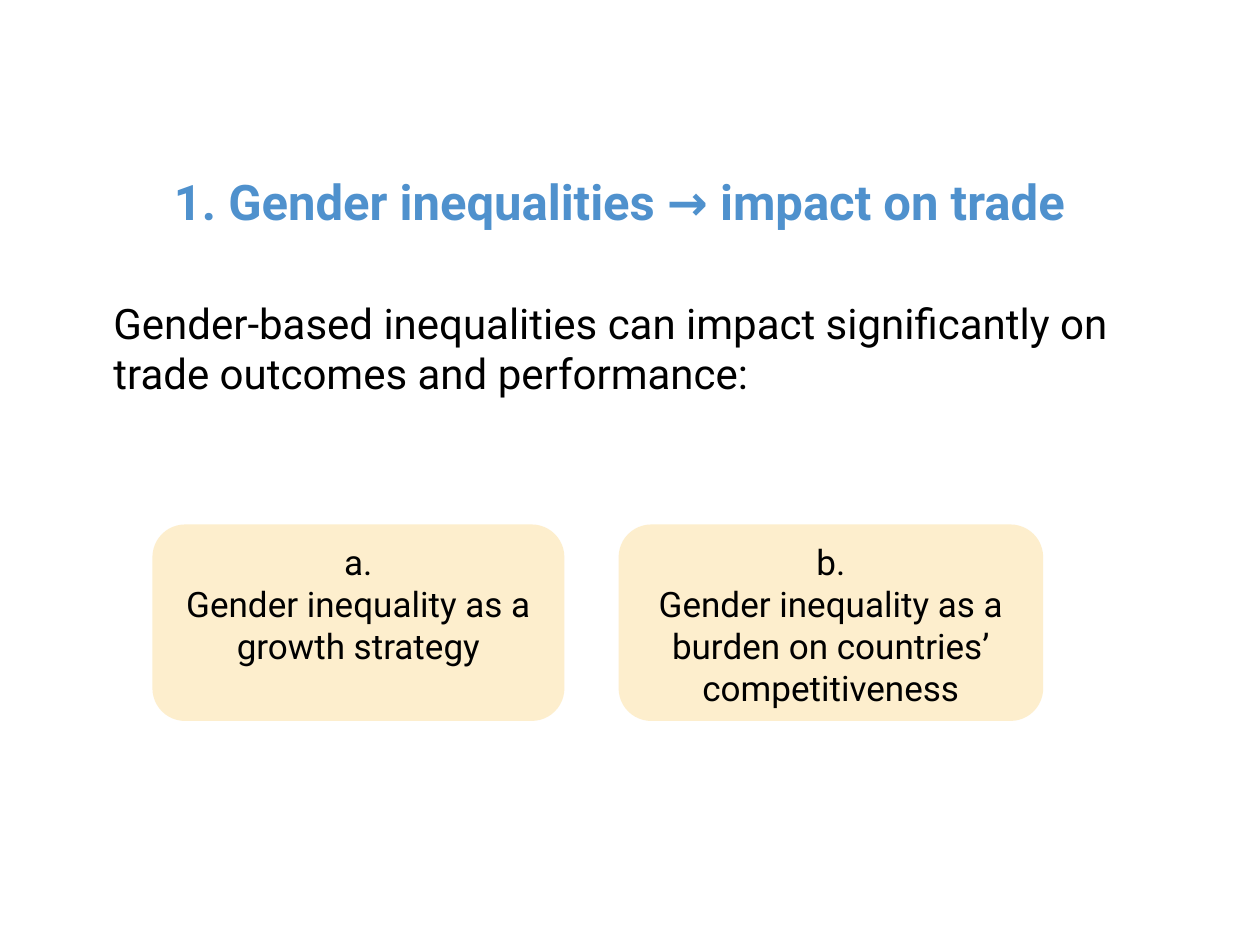
from dataclasses import dataclass

from lxml import etree
from pptx import Presentation
from pptx.dml.color import RGBColor
from pptx.enum.shapes import MSO_SHAPE
from pptx.enum.text import MSO_ANCHOR, MSO_AUTO_SIZE, PP_ALIGN
from pptx.oxml.ns import qn
from pptx.util import Inches, Pt

ROUNDED = MSO_SHAPE.ROUNDED_RECTANGLE
TOP = MSO_ANCHOR.TOP
NO_AUTOFIT = MSO_AUTO_SIZE.NONE
LEFT, CENTER = PP_ALIGN.LEFT, PP_ALIGN.CENTER

FONT = "Roboto"
COLORS = {"title": "4F91CD", "text": "000000", "card": "FCE2A7"}
CARD_OPACITY = 56
PAGE_WIDTH, PAGE_HEIGHT = Inches(10), Inches(7.5)


@dataclass
class Area:
    """A rectangle in shares of the slide's width and height."""
    left: float
    top: float
    width: float
    height: float

    def lengths(self) -> tuple[int, int, int, int]:
        return (int(self.left * PAGE_WIDTH), int(self.top * PAGE_HEIGHT),
                int(self.width * PAGE_WIDTH), int(self.height * PAGE_HEIGHT))


@dataclass
class Card:
    lines: list[str]
    left: float
    width: float


TITLE_AREA = Area(0.03, 0.175, 0.923, 0.167)
BODY_AREA = Area(0.08, 0.308, 0.823, 0.122)
CARD_TOP, CARD_HEIGHT = 0.555, 0.208
CARDS = [
    Card(["a.", "Gender inequality as a growth strategy"], 0.121, 0.327),
    Card(["b.", "Gender inequality as a burden on countries’ competitiveness"], 0.491, 0.337),
]


def write_text(box, lines: list[str], *, size: float, color: str = "text",
               bold: bool = False, align=LEFT) -> None:
    frame = box.text_frame
    frame.text = "\n".join(lines)
    frame.word_wrap = True
    frame.auto_size = NO_AUTOFIT
    frame.vertical_anchor = TOP
    for para in frame.paragraphs:
        properties = para._p.get_or_add_pPr()
        properties.set("marL", "0")
        properties.set("indent", "0")
        etree.SubElement(properties, qn("a:buNone"))
        para.alignment = align
        para.space_before = Pt(0)
        for span in para.runs:
            span.font.name = FONT
            span.font.size = Pt(size)
            span.font.bold = bold
            span.font.color.rgb = RGBColor.from_string(COLORS[color])


def place(box, area: Area) -> None:
    box.left, box.top, box.width, box.height = area.lengths()


def draw_card(page, card: Card) -> None:
    area = Area(card.left, CARD_TOP, card.width, CARD_HEIGHT)
    box = page.shapes.add_shape(ROUNDED, *area.lengths())
    box.shadow.inherit = False
    box.line.fill.background()
    box.fill.solid()
    box.fill.fore_color.rgb = RGBColor.from_string(COLORS["card"])
    tint = box.fill._xPr.find(qn("a:solidFill"))[0]
    etree.SubElement(tint, qn("a:alpha"), val=str(CARD_OPACITY * 1000))
    write_text(box, card.lines, size=20, align=CENTER)


def main() -> None:
    deck = Presentation()
    deck.slide_width, deck.slide_height = PAGE_WIDTH, PAGE_HEIGHT
    page = deck.slides.add_slide(deck.slide_layouts[1])

    # Heading
    title = page.shapes.title
    place(title, TITLE_AREA)
    write_text(title, ["1. Gender inequalities → impact on trade"],
               size=28, color="title", bold=True, align=CENTER)

    # Introduction
    body = page.placeholders[1]
    place(body, BODY_AREA)
    write_text(body, ["Gender-based inequalities can impact significantly on "
                      "trade outcomes and performance:"], size=24)

    # The two kinds of impact
    for card in CARDS:
        draw_card(page, card)

    deck.save("out.pptx")


if __name__ == "__main__":
    main()
